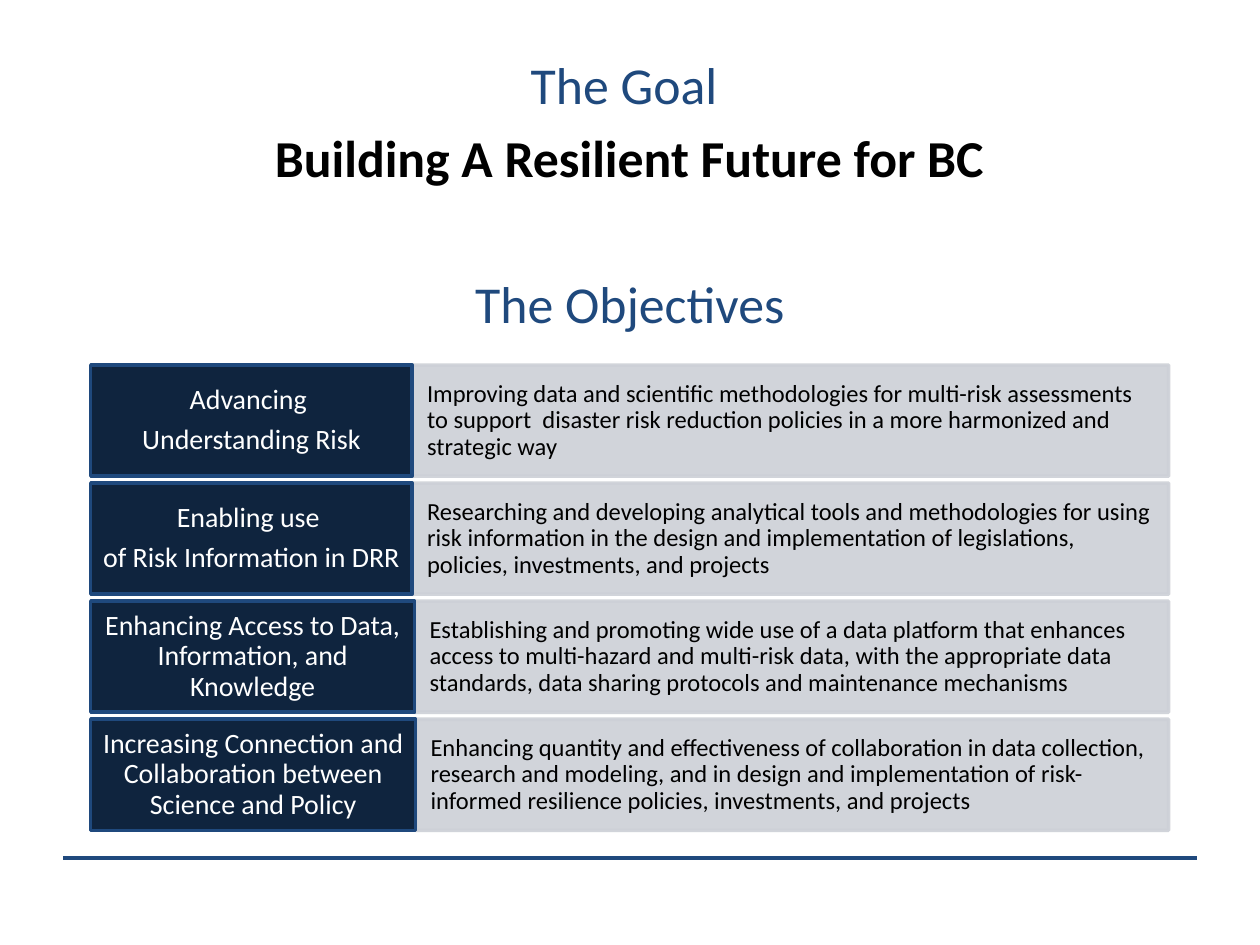
import pptx
import pptx.dml.color
import pptx.enum.shapes
import pptx.enum.text
import pptx.oxml
import pptx.oxml.ns
import pptx.util
from pptx.util import Cm

ALIGN = pptx.enum.text.PP_ALIGN
ANCHOR = pptx.enum.text.MSO_ANCHOR
NAVY, BLUE, GREY = "0F243E", "1F497D", "CDD0D7"


def paint(color_format, color, opacity=100):
    """Set a solid colour on a fill's fore_color, a line's or a font's color."""
    color_format.rgb = pptx.dml.color.RGBColor.from_string(color)


def write(frame, lines, size, color, align=ALIGN.CENTER, anchor=ANCHOR.MIDDLE,
          margins=(0, 0), spacing=1.0, before=0, after=0, bold=False):
    """Fill a text frame, one paragraph per line; margins are (side, top) in cm."""
    frame.word_wrap = True
    frame.auto_size = pptx.enum.text.MSO_AUTO_SIZE.NONE
    frame.vertical_anchor = anchor
    frame.margin_left = frame.margin_right = Cm(margins[0])
    frame.margin_top = frame.margin_bottom = Cm(margins[1])
    frame.text = "\n".join(lines)
    for paragraph in frame.paragraphs:
        paragraph.alignment = align
        paragraph.line_spacing = spacing
        paragraph.space_before = pptx.util.Pt(before)
        paragraph.space_after = pptx.util.Pt(after)
        font = paragraph.runs[0].font
        font.name, font.size, font.bold = "Calibri", pptx.util.Pt(size), bold
        paint(font.color, color)


prs = pptx.Presentation()
prs.slide_width, prs.slide_height = Cm(25.4), Cm(19.05)
slide = prs.slides.add_slide(prs.slide_layouts[5])

# Goal and objectives heading
heading = slide.shapes.title
heading.left, heading.top, heading.width, heading.height = Cm(1.27), Cm(0.94), Cm(22.86), Cm(5.84)
write(heading.text_frame,
      ["The Goal ", "Building A Resilient Future for BC", "The Objectives"],
      29.6, BLUE, anchor=ANCHOR.TOP, margins=(0.25, 0.13), before=6)
goal, objectives = heading.text_frame.paragraphs[1:]
goal.runs[0].font.bold = True
paint(goal.runs[0].font.color, "000000")
objectives.space_before = pptx.util.Pt(48)

# Objectives: label lines, label width, description
rows = [
    (["Advancing ", "Understanding Risk"], 6.48,
     "Improving data and scientific methodologies for multi-risk assessments to support  "
     "disaster risk reduction policies in a more harmonized and strategic way"),
    (["Enabling use ", "of Risk Information in DRR"], 6.48,
     "Researching and developing analytical tools and methodologies for using risk information "
     "in the design and implementation of legislations, policies, investments, and projects"),
    (["Enhancing Access to Data, Information, and Knowledge"], 6.53,
     "Establishing and promoting wide use of a data platform that enhances access to multi-hazard "
     "and multi-risk data, with the appropriate data standards, data sharing protocols and "
     "maintenance mechanisms"),
    (["Increasing Connection and Collaboration between Science and Policy"], 6.55,
     "Enhancing quantity and effectiveness of collaboration in data collection, research and "
     "modeling, and in design and implementation of risk-informed resilience policies, "
     "investments, and projects "),
]
LEFT, RIGHT, TOP, PITCH, HEIGHT = 1.83, 23.56, 7.36, 2.38, 2.24

for index, (label, label_width, description) in enumerate(rows):
    split = LEFT + label_width
    cells = [
        (split, RIGHT - split, GREY, GREY, [description],
         dict(size=14, color="000000", align=ALIGN.LEFT, margins=(0.3, 0.56), after=4.9)),
        (LEFT, label_width, NAVY, BLUE, label,
         dict(size=16, color="FFFFFF", margins=(0.2, 0.23), after=5.6)),
    ]
    for left, width, fill, outline, lines, text_format in cells:
        cell = slide.shapes.add_shape(pptx.enum.shapes.MSO_SHAPE.RECTANGLE, Cm(left),
                                      Cm(TOP + index * PITCH), Cm(width), Cm(HEIGHT))
        cell.shadow.inherit = False
        cell.fill.solid()
        paint(cell.fill.fore_color, fill)
        paint(cell.line.color, outline)
        cell.line.width = pptx.util.Pt(2)
        if fill == GREY:
            for color in cell._element.spPr.iter(pptx.oxml.ns.qn("a:srgbClr")):
                color.append(pptx.oxml.parse_xml(
                    f'<a:alpha {pptx.oxml.ns.nsdecls("a")} val="90000"/>'))
        write(cell.text_frame, lines, spacing=0.9, **text_format)

# Footer rule
rule = slide.shapes.add_connector(pptx.enum.shapes.MSO_CONNECTOR.STRAIGHT,
                                  Cm(1.27), Cm(17.3), Cm(24.13), Cm(17.3))
paint(rule.line.color, BLUE)
rule.line.width = pptx.util.Pt(2)
rule._element.spPr.append(pptx.oxml.parse_xml(f'<a:effectLst {pptx.oxml.ns.nsdecls("a")}/>'))

prs.save("out.pptx")
